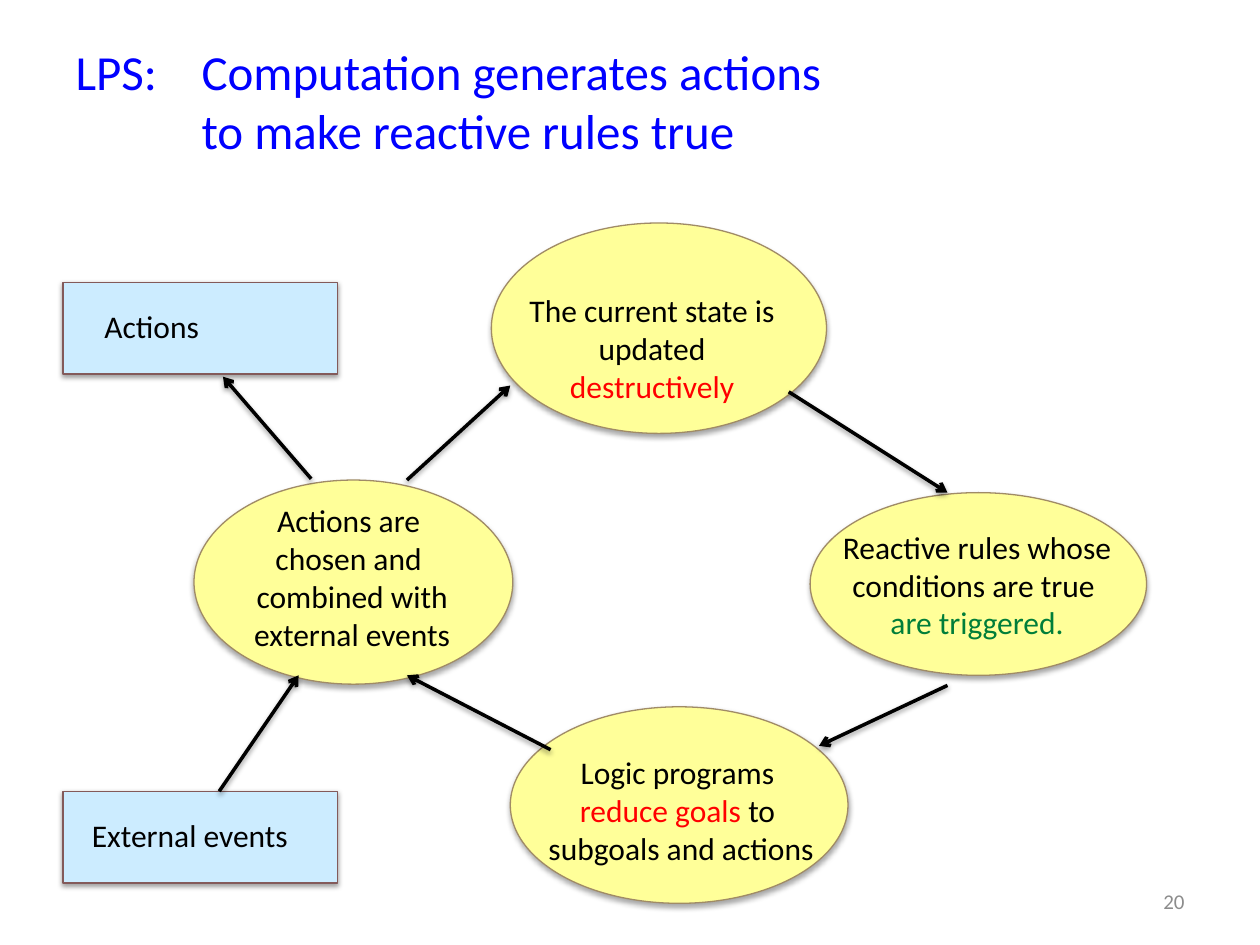
"""Build the slide showing the LPS cycle of states, rules, goals and actions."""
import pptx
import pptx.dml.color
import pptx.enum.shapes
import pptx.enum.text
import pptx.oxml
import pptx.oxml.ns
import pptx.util

Inches, Pt = pptx.util.Inches, pptx.util.Pt
RGBColor = pptx.dml.color.RGBColor
SHAPE = pptx.enum.shapes.MSO_SHAPE
ALIGN = pptx.enum.text.PP_ALIGN
ANCHOR = pptx.enum.text.MSO_ANCHOR

BLUE = RGBColor(0x00, 0x00, 0xFF)
BLACK = RGBColor(0x00, 0x00, 0x00)
RED = RGBColor(0xFF, 0x00, 0x00)
GREEN = RGBColor(0x00, 0x7E, 0x39)
GREY = RGBColor(0x8C, 0x8C, 0x8C)
PALE_BLUE = RGBColor(0xCC, 0xEC, 0xFF)
PALE_YELLOW = RGBColor(0xFF, 0xFF, 0x99)
BROWN = RGBColor(0x83, 0x5A, 0x5A)
TAN = RGBColor(0xA0, 0x8B, 0x66)

TITLE = "LPS:\tComputation generates actions\vto make reactive rules true"
PAGE = "20"

EXTERNALS = [
    ((0.5, 6.28, 2.18, 0.73), (0.63, 6.43, 1.81, 0.4), [[("External events", BLACK)]]),
    ((0.5, 2.24, 2.18, 0.73), (0.73, 2.39, 1.81, 0.4), [[("Actions", BLACK)]]),
]
STAGES = [
    ((3.9, 1.77, 2.66, 1.67), (3.68, 2.26, 2.99, 1.01),
     [[("The current state is updated", BLACK)], [("destructively", RED)]]),
    ((6.43, 3.91, 2.67, 1.45), (6.26, 4.14, 2.99, 1.01),
     [[("Reactive rules whose conditions are true ", BLACK)], [("are triggered.", GREEN)]]),
    ((4.05, 5.61, 2.68, 1.56), (3.76, 5.93, 3.29, 1.01),
     [[("Logic programs ", BLACK)], [("reduce goals ", RED), ("to ", BLACK)],
      [("subgoals and actions", BLACK)]]),
    ((1.54, 3.81, 2.53, 1.62), (1.3, 3.93, 2.99, 1.31),
     [[("Actions are ", BLACK)], [("chosen and ", BLACK)],
      [("combined with", BLACK)], [("external events", BLACK)]]),
]
ARROWS = [
    ((3.23, 3.81), (4.05, 3.06)),
    ((1.74, 6.28), (2.37, 5.36)),
    ((6.26, 3.11), (7.52, 3.91)),
    ((7.52, 5.44), (6.5, 5.92)),
    ((4.37, 5.95), (3.23, 5.36)),
    ((2.47, 3.8), (1.77, 2.99)),
]
GROUPS = [
    (EXTERNALS, SHAPE.RECTANGLE, PALE_BLUE, BROWN, ALIGN.LEFT, (38, 1.6)),
    (STAGES, SHAPE.OVAL, PALE_YELLOW, TAN, ALIGN.CENTER, (35, 1.8)),
]


def set_all(target, values):
    for name, value in values.items():
        setattr(target, name, value)


def inches(lengths):
    return [Inches(length) for length in lengths]


def add_shadow(item, opacity, distance):
    item._element.spPr.append(pptx.oxml.parse_xml(
        f'<a:effectLst {pptx.oxml.ns.nsdecls("a")}>'
        f'<a:outerShdw blurRad="{Pt(3.1)}" dist="{Pt(distance)}" dir="5400000" rotWithShape="0">'
        f'<a:srgbClr val="000000"><a:alpha val="{opacity * 1000}"/></a:srgbClr>'
        '</a:outerShdw></a:effectLst>'))


def add_node(slide, box, outline, fill, line, shadow):
    node = slide.shapes.add_shape(outline, *inches(box))
    node.fill.solid()
    node.fill.fore_color.rgb = fill
    node.line.color.rgb = line
    node.line.width = Pt(0.75)
    add_shadow(node, *shadow)


def add_label(slide, box, lines, align, size=18, anchor=ANCHOR.TOP):
    frame = slide.shapes.add_textbox(*inches(box)).text_frame
    set_all(frame, {"word_wrap": True, "vertical_anchor": anchor})
    for number, pieces in enumerate(lines):
        paragraph = frame.add_paragraph() if number else frame.paragraphs[0]
        paragraph.alignment = align
        for words, color in pieces:
            run = paragraph.add_run()
            run.text = words
            set_all(run.font, {"name": "Calibri", "size": Pt(size)})
            run.font.color.rgb = color


def add_arrow(slide, start, end):
    arrow = slide.shapes.add_connector(
        pptx.enum.shapes.MSO_CONNECTOR.STRAIGHT, *inches(start + end))
    arrow.line.color.rgb = BLACK
    arrow.line.width = Pt(2)
    arrow.line._get_or_add_ln().append(pptx.oxml.parse_xml(
        f'<a:tailEnd {pptx.oxml.ns.nsdecls("a")} type="arrow"/>'))
    add_shadow(arrow, 38, 1.6)


def add_title(slide):
    title = slide.shapes.title
    set_all(title, dict(zip(("left", "top", "width", "height"), inches((0.5, 0.17, 9, 1.25)))))
    title.text_frame.text = TITLE
    title.text_frame.vertical_anchor = ANCHOR.MIDDLE
    heading = title.text_frame.paragraphs[0]
    heading.alignment = ALIGN.LEFT
    hanging = heading._p.get_or_add_pPr()
    hanging.set("marL", str(Inches(1)))
    hanging.set("indent", str(-Inches(1)))
    for run in heading.runs:
        set_all(run.font, {"name": "Calibri", "size": Pt(28)})
        run.font.color.rgb = BLUE


def main():
    deck = pptx.Presentation()
    set_all(deck, {"slide_width": Inches(10), "slide_height": Inches(7.5)})
    slide = deck.slides.add_slide(deck.slide_layouts[5])
    add_title(slide)
    for nodes, outline, fill, line, align, shadow in GROUPS:
        for box, label_box, lines in nodes:
            add_node(slide, box, outline, fill, line, shadow)
            add_label(slide, label_box, lines, align)
    for start, end in ARROWS:
        add_arrow(slide, start, end)
    add_label(slide, (7.17, 6.95, 2.33, 0.4), [[(PAGE, GREY)]], ALIGN.RIGHT, 12, ANCHOR.MIDDLE)
    deck.save("out.pptx")


if __name__ == "__main__":
    main()
